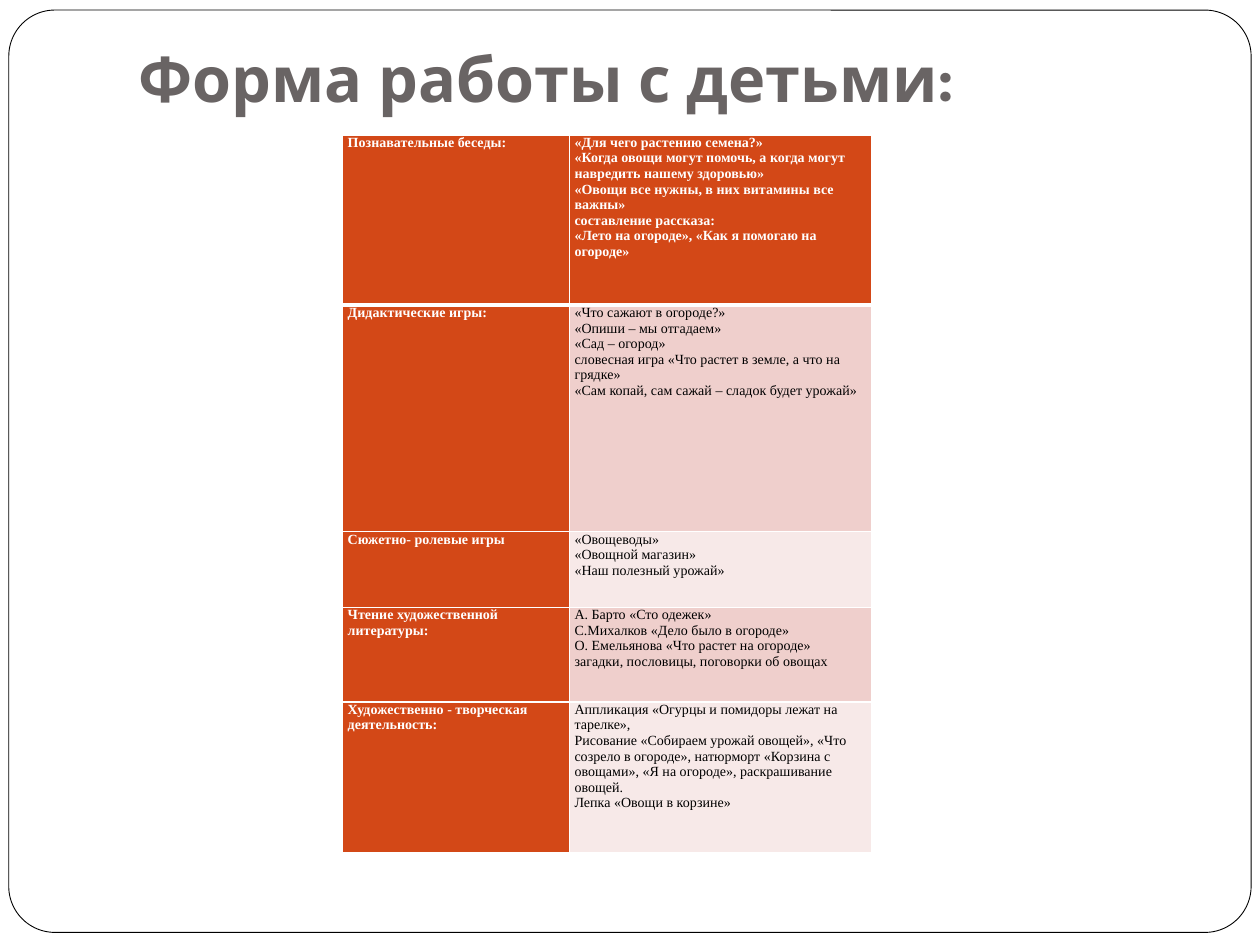
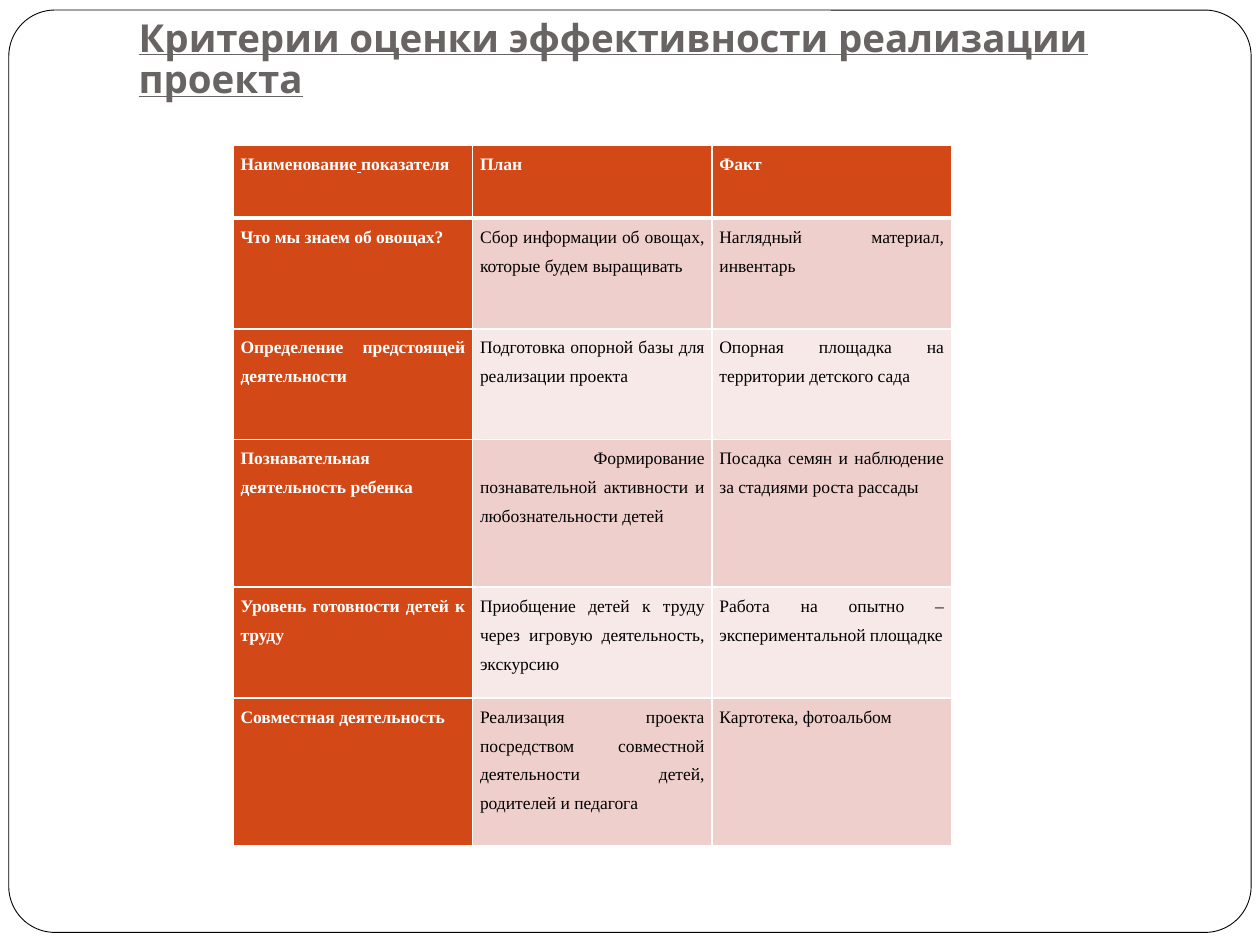
"""Builds two slides about a vegetable garden project for children."""
from dataclasses import dataclass
from lxml import etree
from pptx import Presentation
from pptx import util as u
from pptx.dml.color import RGBColor
from pptx.enum import shapes, text
from pptx.oxml import ns


@dataclass(frozen=True)
class Theme:
    """Colours, fonts and type sizes."""
    white: str = "FFFFFF"
    black: str = "000000"
    grey: str = "696464"
    accent: str = "D34817"
    bands: tuple = ("EFCFCC", "F7E9E8")
    title_font: str = "Karla"
    body_font: str = "Times New Roman"
    rule: float = 1
    header_rule: float = 3


class Deck:
    """Holds the style and the current slide."""

    def __init__(self, theme):
        self.theme = theme
        self.prs = Presentation()
        self.prs.slide_width, self.prs.slide_height = u.Inches(10), u.Inches(7.5)
        self.s = None

    def run(self, p, words, color, **fmt):
        """Adds a formatted run."""
        r = p.add_run()
        r.text = words
        for name, value in fmt.items():
            setattr(r.font, name, value)
        r.font.color.rgb = RGBColor.from_string(color)

    def slide(self, title, size, bottom, underline=False):
        """Starts a slide with its frame and title."""
        self.s = self.prs.slides.add_slide(self.prs.slide_layouts[5])
        self.title(title, size, bottom, underline)
        self.frame()

    def title(self, words, size, bottom, underline):
        """Moves and formats the title placeholder."""
        sp = self.s.shapes.title
        box = {"left": 1, "top": 0.3, "width": 8.5, "height": 1.25}
        for name, value in box.items():
            setattr(sp, name, u.Inches(value))
        tf = sp.text_frame
        fmt = {"auto_size": text.MSO_AUTO_SIZE.NONE, "word_wrap": True,
               "vertical_anchor": text.MSO_ANCHOR.BOTTOM,
               "margin_left": u.Inches(0.1), "margin_right": u.Inches(0.1),
               "margin_top": u.Inches(0.05), "margin_bottom": u.Inches(bottom)}
        for name, value in fmt.items():
            setattr(tf, name, value)
        p = tf.paragraphs[0]
        p.alignment = text.PP_ALIGN.LEFT
        p.line_spacing = 0.9
        self.run(p, words, self.theme.grey, name=self.theme.title_font,
                 size=u.Pt(size), bold=True, underline=underline)

    def frame(self):
        """Draws the rounded frame behind the title."""
        box = [u.Inches(v) for v in (0.07, 0.08, 9.86, 7.32)]
        sp = self.s.shapes.add_shape(shapes.MSO_SHAPE.ROUNDED_RECTANGLE, *box)
        sp.adjustments[0] = 0.05
        sp.shadow.inherit = False
        sp.fill.solid()
        sp.fill.fore_color.rgb = RGBColor.from_string(self.theme.white)
        sp.line.color.rgb = RGBColor.from_string(self.theme.black)
        sp.line.width = u.Pt(0.5)
        sp.element.addnext(self.s.shapes.title.element)

    def table(self, left, top, widths, heights, rows, **style):
        """Adds a table with a header row, a header column and bands."""
        size = [u.Inches(v) for v in (left, top, sum(widths), sum(heights))]
        tbl = self.s.shapes.add_table(len(rows), len(widths), *size).table
        for column, width in zip(tbl.columns, widths):
            column.width = u.Inches(width)
        for i, (row, height) in enumerate(zip(rows, heights)):
            tbl.rows[i].height = u.Inches(height)
            for j, words in enumerate(row):
                self.cell(tbl.cell(i, j), words, i, j, **style)

    def cell(self, cell, words, i, j, size, margin, align, spacing):
        """Fills a cell; underscores enclose underlined words."""
        head = i == 0 or j == 0
        color = self.theme.white if head else self.theme.black
        fill = self.theme.accent if head else self.theme.bands[(i - 1) % 2]
        fmt = {"margin_left": u.Inches(margin), "margin_right": u.Inches(margin),
               "margin_top": 0, "margin_bottom": 0}
        for name, value in fmt.items():
            setattr(cell, name, value)
        self.borders(cell, i)
        cell.fill.solid()
        cell.fill.fore_color.rgb = RGBColor.from_string(fill)
        tf = cell.text_frame
        for n, line in enumerate(words.split("\n")):
            p = tf.add_paragraph() if n else tf.paragraphs[0]
            p.alignment, p.line_spacing = align, spacing
            for k, part in enumerate(line.split("_")):
                self.run(p, part, color, name=self.theme.body_font,
                         size=u.Pt(size), bold=head, underline=k % 2 == 1)

    def borders(self, cell, i):
        """Gives a cell white borders, thicker under the header row."""
        props = cell._tc.get_or_add_tcPr()
        for n, side in enumerate("LRTB"):
            thick = (i, side) in ((0, "B"), (1, "T"))
            width = self.theme.header_rule if thick else self.theme.rule
            ln = etree.Element(ns.qn("a:ln" + side), w=str(u.Pt(width)))
            fill = etree.SubElement(ln, ns.qn("a:solidFill"))
            etree.SubElement(fill, ns.qn("a:srgbClr"), val=self.theme.white)
            props.insert(n, ln)


ACTIVITIES = [
    ("Познавательные беседы:",
     "«Для чего растению семена?»\n"
     "«Когда овощи могут помочь, а когда могут навредить нашему здоровью»\n"
     "«Овощи все нужны, в них витамины все важны»\n"
     "составление рассказа:\n"
     "«Лето на огороде», «Как я помогаю на огороде»"),
    ("Дидактические игры:",
     "«Что сажают в огороде?»\n"
     "«Опиши – мы отгадаем»\n"
     "«Сад – огород»\n"
     "словесная игра «Что растет в земле, а что на грядке»\n"
     "«Сам копай, сам сажай – сладок будет урожай»"),
    ("Сюжетно- ролевые игры",
     "«Овощеводы»\n«Овощной магазин»\n«Наш полезный урожай»"),
    ("Чтение художественной литературы:",
     "А. Барто «Сто одежек»\n"
     "С.Михалков «Дело было в огороде»\n"
     "О. Емельянова «Что растет на огороде»\n"
     "загадки, пословицы, поговорки об овощах"),
    ("Художественно - творческая деятельность:",
     "Аппликация «Огурцы и помидоры лежат на тарелке»,\n"
     "Рисование «Собираем урожай овощей», «Что созрело в огороде», "
     "натюрморт «Корзина с овощами», «Я на огороде», раскрашивание овощей.\n"
     "Лепка «Овощи в корзине»"),
]

CRITERIA = [
    ("Наименование_ _показателя", "План", "Факт"),
    ("Что мы знаем об овощах?",
     "Сбор информации об овощах, которые будем выращивать",
     "Наглядный материал, инвентарь"),
    ("Определение предстоящей деятельности",
     "Подготовка опорной базы для реализации проекта",
     "Опорная площадка на территории детского сада"),
    ("Познавательная деятельность ребенка",
     " Формирование познавательной активности и любознательности детей",
     "Посадка семян и наблюдение за стадиями роста рассады"),
    ("Уровень готовности детей к труду",
     "Приобщение детей к труду через игровую деятельность, экскурсию",
     "Работа на опытно – экспериментальной площадке"),
    ("Совместная деятельность",
     "Реализация проекта посредством совместной деятельности детей, "
     "родителей и педагога",
     "Картотека, фотоальбом"),
]


def main():
    """Builds and saves the slides."""
    deck = Deck(Theme())
    deck.slide("Форма работы с детьми:", 36, 0.63)
    deck.table(2.72, 1.07, (1.8, 2.4), (1.35, 1.8, 0.6, 0.75, 1.2), ACTIVITIES,
               size=8, margin=0.04, align=text.PP_ALIGN.LEFT, spacing=1.0)
    deck.slide("Критерии оценки эффективности реализации проекта", 22, 0.74,
               underline=True)
    deck.table(1.85, 1.15, (1.9,) * 3, (0.58, 0.88, 0.88, 1.17, 0.88, 1.17),
               CRITERIA, size=10, margin=0.06, align=text.PP_ALIGN.JUSTIFY,
               spacing=1.5)
    deck.prs.save("out.pptx")


if __name__ == "__main__":
    main()
